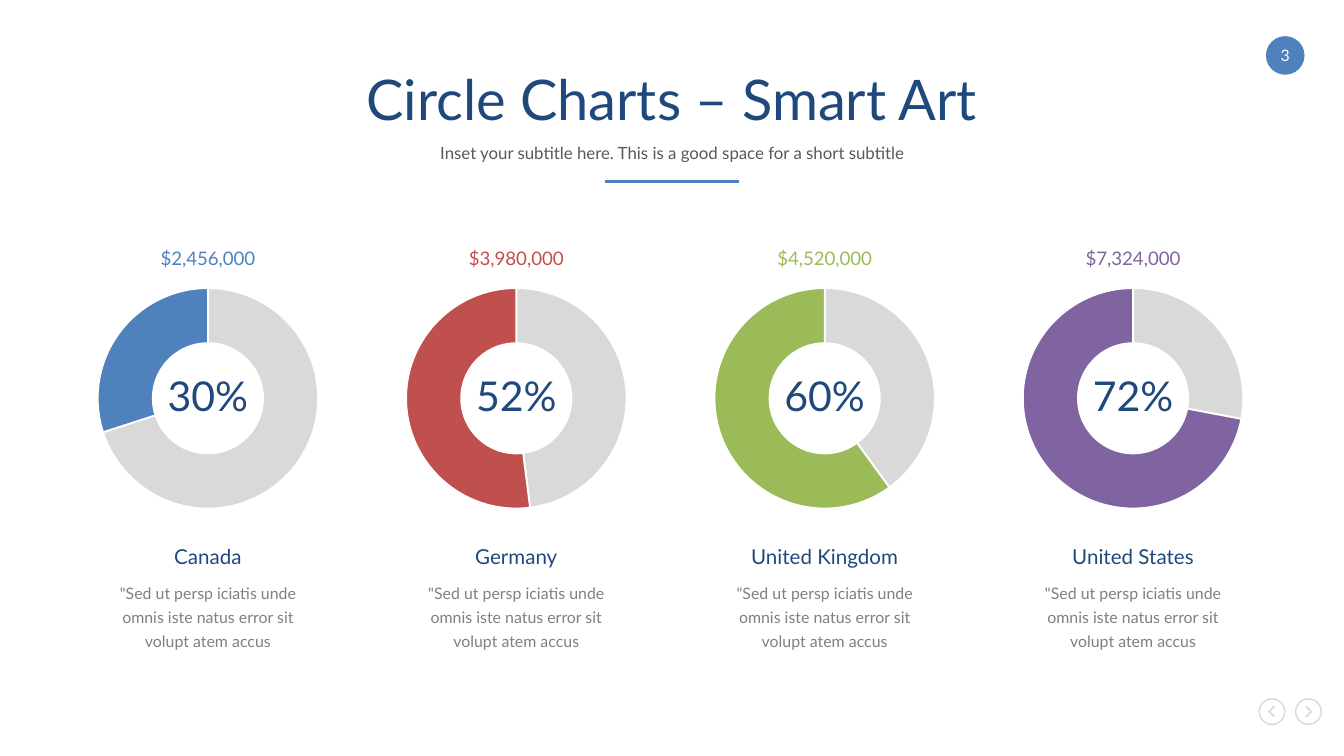
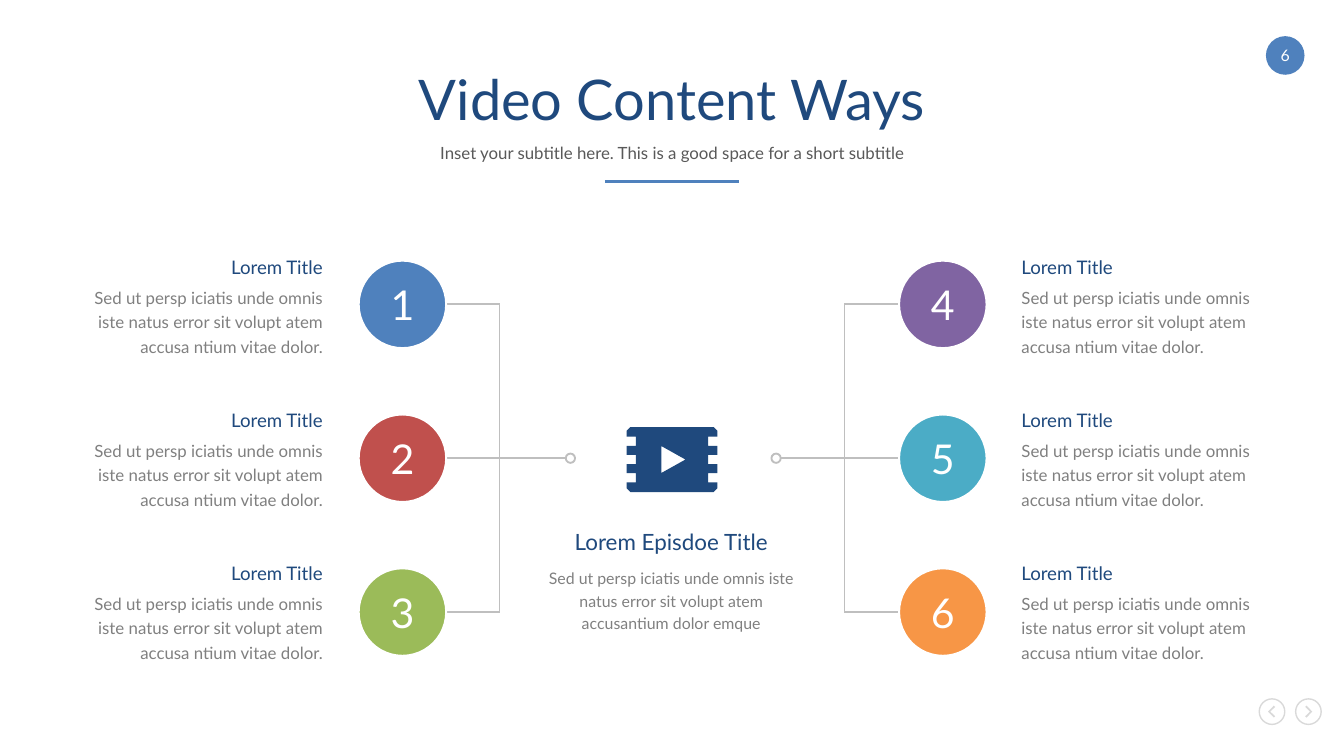
"""Build two slides: country doughnut charts and a numbered video content map."""
from dataclasses import dataclass

from lxml.etree import SubElement
from pptx import Presentation
from pptx.chart.data import CategoryChartData
from pptx.dml.color import RGBColor
from pptx.enum.chart import XL_CHART_TYPE
from pptx.enum.shapes import MSO_CONNECTOR, MSO_SHAPE
from pptx.enum.text import MSO_ANCHOR, PP_ALIGN
from pptx.oxml import parse_xml
from pptx.oxml.ns import nsdecls, qn
from pptx.util import Pt


@dataclass(frozen=True)
class Theme:
    font: str = "Lato"
    chart_font: str = "Calibri"
    navy: str = "1F497D"
    blue: str = "4F81BD"
    red: str = "C0504D"
    green: str = "9BBB59"
    purple: str = "8064A2"
    teal: str = "4BACC6"
    orange: str = "F79646"
    white: str = "FFFFFF"
    black: str = "000000"
    subtitle: str = "595959"
    body: str = "808080"
    wire: str = "BFBFBF"
    pale: str = "D9D9D9"
    title_size: float = 30
    figure_size: float = 22
    chart_size: float = 18
    episode_size: float = 12
    name_size: float = 11
    label_size: float = 10
    text_size: float = 9
    small_size: float = 8.5


@dataclass(frozen=True)
class Para:
    text: str
    size: float
    color: str
    leading: float = 0
    after: float = 0


@dataclass(frozen=True)
class Side:
    text_left: float
    align: PP_ALIGN
    circle_left: float
    wire_end: float
    spine: float
    hub: float
    dot_left: float
    steps: tuple


THEME = Theme()
SUBTITLE = "Inset your subtitle here. This is a good space for a short subtitle"
COUNTRY_TEXT = '"Sed ut persp iciatis unde omnis iste natus error sit volupt atem accus'
STEP_TEXT = ("Sed ut persp iciatis unde omnis iste natus error sit volupt atem "
             "accusa ntium vitae dolor.")
EPISODE_TEXT = ("Sed ut persp iciatis unde omnis iste natus error sit volupt atem "
                "accusantium dolor emque")
COUNTRIES = (
    ("Canada", "$2,456,000", 30, THEME.blue),
    ("Germany", "$3,980,000", 52, THEME.red),
    ("United Kingdom", "$4,520,000", 60, THEME.green),
    ("United States", "$7,324,000", 72, THEME.purple),
)
SIDES = (
    Side(46.8, PP_ALIGN.RIGHT, 192.2, 239, 267.6, 303.1, 303.1,
         (("1", THEME.blue), ("2", THEME.red), ("3", THEME.green))),
    Side(547.2, PP_ALIGN.LEFT, 481.7, 481, 452.4, 418.3, 413.3,
         (("4", THEME.purple), ("5", THEME.teal), ("6", THEME.orange))),
)


def rgb(color):
    """Turn a hex string into a colour."""
    return RGBColor.from_string(color)


def fill_frame(frame, paras, align, anchor):
    """Write paragraphs into a text frame without insets."""
    frame.word_wrap = True
    frame.vertical_anchor = anchor
    frame.margin_left = frame.margin_right = frame.margin_top = frame.margin_bottom = 0
    for index, para in enumerate(paras):
        paragraph = frame.add_paragraph() if index else frame.paragraphs[0]
        paragraph.alignment = align
        if para.leading:
            paragraph.line_spacing = Pt(para.leading)
        paragraph.space_after = Pt(para.after)
        span = paragraph.add_run()
        span.text = para.text
        span.font.name = THEME.font
        span.font.size = Pt(para.size)
        span.font.color.rgb = rgb(para.color)


def add_text(page, left, top, width, height, *paras,
             align=PP_ALIGN.CENTER, anchor=MSO_ANCHOR.TOP):
    """Add a text box."""
    box = page.shapes.add_textbox(Pt(left), Pt(top), Pt(width), Pt(height))
    fill_frame(box.text_frame, paras, align, anchor)


def paint(shape, fill=None, line=None, width=1):
    """Set the fill and outline of a shape and drop its shadow."""
    shape.shadow.inherit = False
    if fill:
        shape.fill.solid()
        shape.fill.fore_color.rgb = rgb(fill)
    else:
        shape.fill.background()
    if line:
        shape.line.color.rgb = rgb(line)
        shape.line.width = Pt(width)
    else:
        shape.line.fill.background()


def add_circle(page, left, top, size, fill=None, line=None, width=1, label=None):
    """Add a circle, with a centred label if one is given."""
    circle = page.shapes.add_shape(MSO_SHAPE.OVAL, Pt(left), Pt(top), Pt(size), Pt(size))
    paint(circle, fill, line, width)
    if label:
        fill_frame(circle.text_frame, [label], PP_ALIGN.CENTER, MSO_ANCHOR.MIDDLE)


def add_line(page, start, end, color, width=1):
    """Add a straight line between two points."""
    line = page.shapes.add_connector(
        MSO_CONNECTOR.STRAIGHT, Pt(start[0]), Pt(start[1]), Pt(end[0]), Pt(end[1]))
    line.line.color.rgb = rgb(color)
    line.line.width = Pt(width)
    SubElement(line._element.spPr, qn("a:effectLst"))


def add_outline(page, center, contours, fill):
    """Add a filled freeform from contours placed around a centre."""
    builder = None
    for contour in contours:
        points = [(Pt(center[0] + x), Pt(center[1] + y)) for x, y in contour]
        if builder is None:
            builder = page.shapes.build_freeform(*points[0], scale=1.0)
        else:
            builder.move_to(*points[0])
        builder.add_line_segments(points[1:], close=True)
    paint(builder.convert_to_shape(), fill)


def add_arrow_button(page, left, direction):
    """Add a ringed chevron that points left (-1) or right (1)."""
    top, size = 374.4, 13.7
    add_circle(page, left, top, size, line=THEME.pale, width=0.75)
    chevron = [(-1, -3.2), (-1.7, -2.5), (0.9, 0), (-1.7, 2.5), (-1, 3.2), (2.1, 0)]
    add_outline(page, (left + size / 2, top + size / 2),
                [[(x * direction, y) for x, y in chevron]], THEME.pale)


def add_page(deck, number, title):
    """Add a blank page with the shared title, rule, number and buttons."""
    page = deck.slides.add_slide(deck.slide_layouts[6])
    page.background.fill.solid()
    page.background.fill.fore_color.rgb = rgb(THEME.white)
    add_line(page, (324, 97.2), (396, 97.2), THEME.blue, 1.5)
    add_arrow_button(page, 674.6, -1)
    add_arrow_button(page, 694.1, 1)
    add_circle(page, 678.2, 19.4, 20.7, THEME.blue,
               label=Para(number, THEME.small_size, THEME.white))
    add_text(page, 46.8, 34.6, 626.4, 36, Para(title, THEME.title_size, THEME.navy),
             anchor=MSO_ANCHOR.MIDDLE)
    add_text(page, 46.8, 72.7, 626.4, 18, Para(SUBTITLE, THEME.text_size, THEME.subtitle),
             anchor=MSO_ANCHOR.MIDDLE)
    return page


def add_doughnut(page, left, top, percent, color):
    """Add a doughnut chart that shows one percentage."""
    data = CategoryChartData()
    data.categories = ["1", "2"]
    data.add_series("Series 1", [100 - percent, percent])
    chart = page.shapes.add_chart(
        XL_CHART_TYPE.DOUGHNUT, Pt(left), Pt(top), Pt(139), Pt(142), data).chart
    chart.has_legend = False
    chart.has_title = False
    chart.font.name = THEME.chart_font
    chart.font.size = Pt(THEME.chart_size)
    chart.font.color.rgb = rgb(THEME.black)
    plot = chart.plots[0]
    plot.vary_by_categories = True
    for index, fill in enumerate((THEME.pale, color)):
        style = plot.series[0].points[index].format
        style.fill.solid()
        style.fill.fore_color.rgb = rgb(fill)
        style.line.color.rgb = rgb(THEME.white)
        style.line.width = Pt(1)
    area = chart._chartSpace.find(".//" + qn("c:plotArea"))
    area.find(".//" + qn("c:holeSize")).set("val", "63")
    for layout in area.findall(qn("c:layout")):
        area.remove(layout)
    area.insert(0, parse_xml(
        f'<c:layout {nsdecls("c")}><c:manualLayout><c:layoutTarget val="inner"/>'
        '<c:xMode val="edge"/><c:yMode val="edge"/><c:x val="0.075"/><c:y val="0.083"/>'
        '<c:w val="0.85"/><c:h val="0.833"/></c:manualLayout></c:layout>'))


def add_country(page, center, name, amount, percent, color):
    """Add one country column around its centre line."""
    add_doughnut(page, center - 69.5, 142.5, percent, color)
    add_text(page, center - 29, 198.7, 58, 28.8,
             Para(f"{percent}%", THEME.figure_size, THEME.navy))
    add_text(page, center - 29, 132.5, 58, 13, Para(amount, THEME.label_size, color))
    add_text(page, center - 58.3, 309.6, 116.6, 46,
             Para(COUNTRY_TEXT, THEME.small_size, THEME.body, 13, 12))
    add_text(page, center - 59, 291.6, 118, 15.8,
             Para(name, THEME.name_size, THEME.navy, after=12))


def add_side(page, side):
    """Add three numbered steps wired to one hub dot."""
    first, pitch, size = 163.1, 82.4, 46.8
    rows = [first + pitch * index for index in range(3)]
    add_line(page, (side.spine, rows[0]), (side.spine, rows[-1]), THEME.wire)
    add_line(page, (side.hub, rows[1]), (side.spine, rows[1]), THEME.wire)
    for index, (row, (number, color)) in enumerate(zip(rows, side.steps)):
        add_line(page, (side.spine, row), (side.wire_end, row), THEME.wire)
        add_circle(page, side.circle_left, row - size / 2, size, color, THEME.white,
                   label=Para(number, THEME.figure_size, THEME.white))
        add_text(page, side.text_left, 136 + 82 * index, 126, 55.4,
                 Para("Lorem Title", THEME.label_size, THEME.navy, 13, 3),
                 Para(STEP_TEXT, THEME.text_size, THEME.body, 13, 3), align=side.align)
    add_circle(page, side.dot_left, rows[1] - 2.5, 5, THEME.white, THEME.wire)


def add_film(page, center):
    """Add a film frame with sprocket notches and a play mark."""
    edge, inner, notch = 24.3, 19.4, 4.9
    right = [(22.3, -17.4), (edge, -15.4)]
    for index in range(3):
        top = notch * (2 * index - 2.5)
        right += [(edge, top), (inner, top), (inner, top + notch), (edge, top + notch)]
    right += [(edge, 15.4), (22.3, 17.4)]
    left = [(-x, -y) for x, y in right]
    play = [(-5.7, 7.2), (7.2, 0), (-5.7, -7.2)]
    add_outline(page, center, [right + left, play], THEME.navy)


def build_charts(deck):
    """Build the page of country charts."""
    page = add_page(deck, "3", "Circle Charts – Smart Art")
    for index, country in enumerate(COUNTRIES):
        add_country(page, 111.4 + 165.2 * index, *country)


def build_video(deck):
    """Build the page of video content steps."""
    page = add_page(deck, "6", "Video Content Ways")
    add_text(page, 293, 285.1, 133.2, 54,
             Para("Lorem Episdoe Title", THEME.episode_size, THEME.navy, 12, 6),
             Para(EPISODE_TEXT, THEME.small_size, THEME.body, 12, 12))
    for side in SIDES:
        add_side(page, side)
    add_film(page, (360, 246.2))


def main():
    """Build and save the deck."""
    deck = Presentation()
    deck.slide_width, deck.slide_height = Pt(720), Pt(405)
    build_charts(deck)
    build_video(deck)
    deck.save("out.pptx")


if __name__ == "__main__":
    main()
